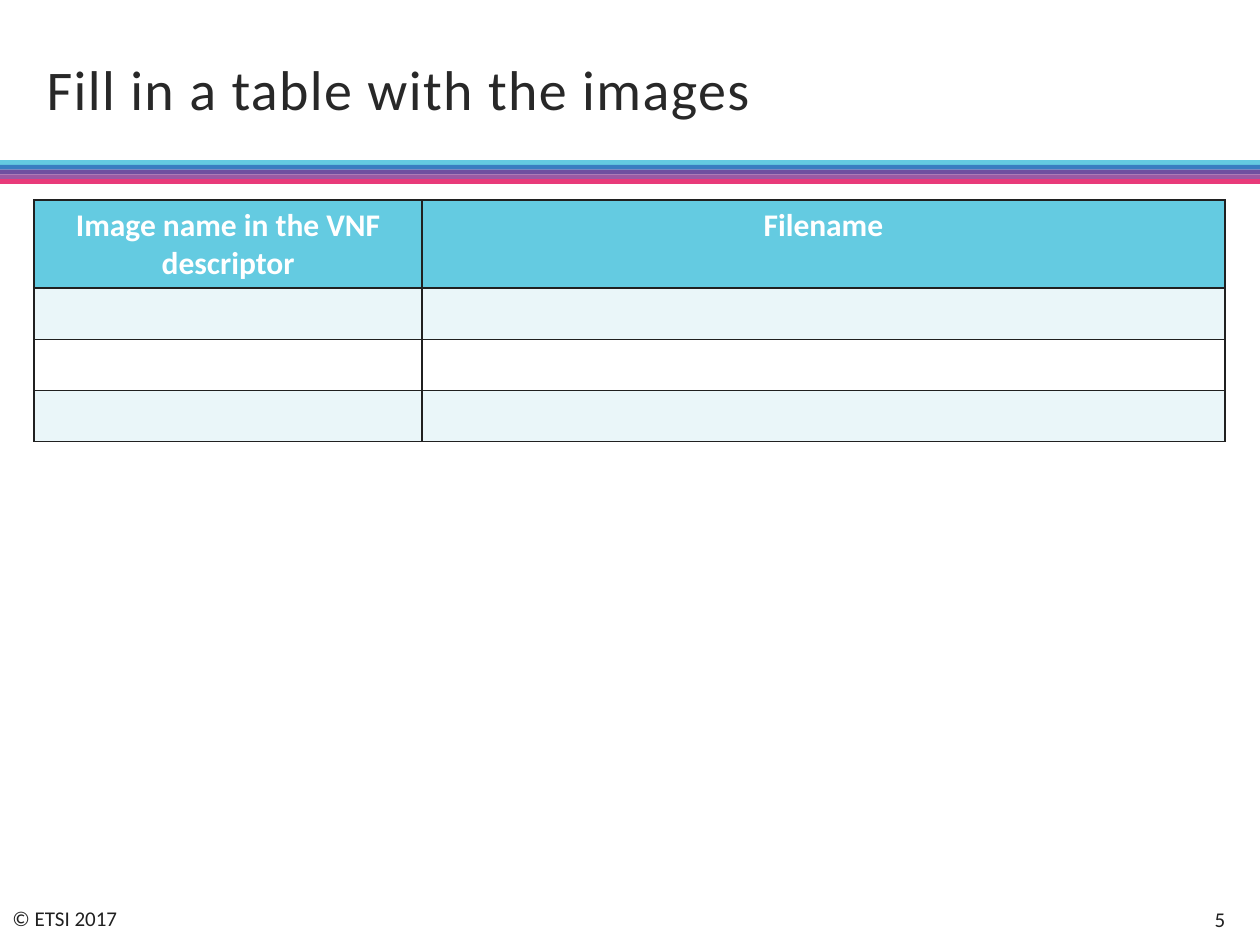
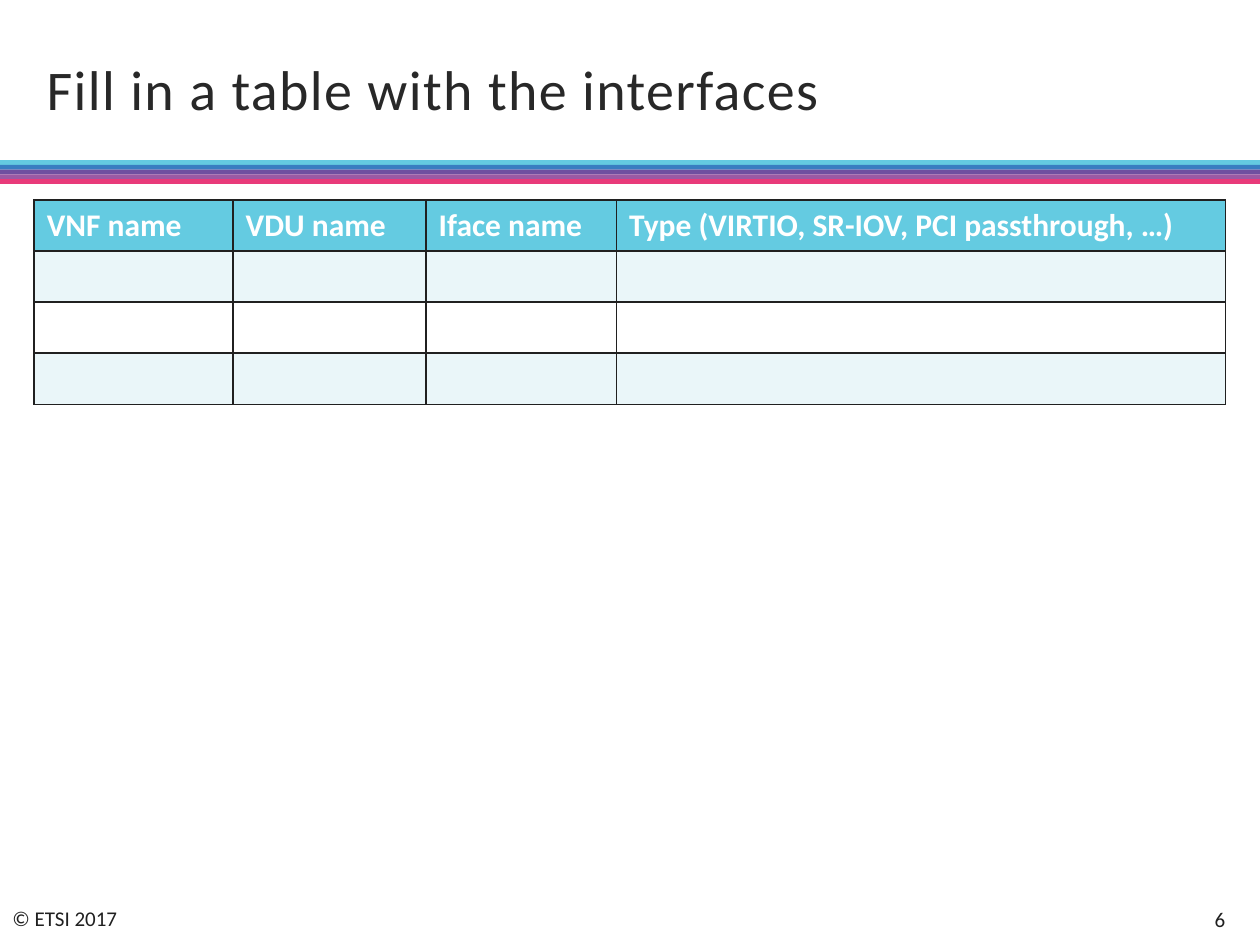
from lxml import etree
from pptx import Presentation
from pptx import util as u
from pptx.dml import color
from pptx.enum import shapes, text
from pptx.oxml import ns

FONT = "Calibri"
INK, TITLE_INK, WHITE = "202020", "282828", "FFFFFF"
HEADER_FILL, ROW_FILLS = "64CBE1", ("EAF6F9", "FFFFFF")
BAND_COLOURS = ("64CBE1", "397EC1", "704FA0", "9B59A4", "E83A7A")
COPYRIGHT = "© ETSI 2017"
FIRST_NUMBER = 5
EMPTY_ROWS = 3

LEFT, CENTER, RIGHT = (text.PP_ALIGN.LEFT, text.PP_ALIGN.CENTER,
                       text.PP_ALIGN.RIGHT)

SLIDES = [
    {"title": "Fill in a table with the images",
     "align": CENTER,
     "columns": [("Image name in the VNF descriptor", 7.82),
                 ("Filename", 16.18)]},
    {"title": "Fill in a table with the interfaces",
     "align": LEFT,
     "columns": [("VNF name", 4.01),
                 ("VDU name", 3.89),
                 ("Iface name", 3.84),
                 ("Type (VIRTIO, SR-IOV, PCI passthrough, …)", 12.27)]},
]

SLIDE_WIDTH, SLIDE_HEIGHT = 25.4, 19.05
TITLE_AREA = (0.69, 0.76, 18.82, 2.21)
COPYRIGHT_AREA = (0, 18.14, 2.82, 0.76)
NUMBER_AREA = (23.6, 18.03, 1.35, 0.99)
BANDS_TOP, BANDS_HEIGHT = 3.23, 0.48
TABLE_LEFT, TABLE_TOP, ROW_HEIGHT = 0.69, 4.03, 1.03


def rgb(value):
    return color.RGBColor.from_string(value)


def paint(target, value):
    target.fill.solid()
    target.fill.fore_color.rgb = rgb(value)


def write(frame, words, size=12, ink=INK, bold=False, align=LEFT,
          line_spacing=None, tracking=None):
    para = frame.paragraphs[0]
    para.alignment = align
    para.line_spacing = line_spacing
    span = para.add_run()
    span.text = words
    span.font.name = FONT
    span.font.size = u.Pt(size)
    span.font.bold = bold
    span.font.color.rgb = rgb(ink)
    if tracking:
        span.font._element.set("spc", str(round(tracking * 100)))


def add_text(page, area, words, anchor=text.MSO_ANCHOR.MIDDLE, wrap=True,
             **style):
    frame = page.shapes.add_textbox(*map(u.Cm, area)).text_frame
    frame.word_wrap = wrap
    frame.vertical_anchor = anchor
    write(frame, words, **style)


def add_bands(page):
    height = BANDS_HEIGHT / len(BAND_COLOURS)
    for index, colour in enumerate(BAND_COLOURS):
        band = page.shapes.add_shape(
            shapes.MSO_SHAPE.RECTANGLE, 0, u.Cm(BANDS_TOP + index * height),
            u.Cm(SLIDE_WIDTH), u.Cm(height))
        band.shadow.inherit = False
        band.line.fill.background()
        paint(band, colour)


def add_borders(cell):
    properties = cell._tc.get_or_add_tcPr()
    for side in ("lnL", "lnR", "lnT", "lnB"):
        line = etree.SubElement(properties, ns.qn(f"a:{side}"),
                                w=str(u.Pt(1)))
        fill = etree.SubElement(line, ns.qn("a:solidFill"))
        etree.SubElement(fill, ns.qn("a:srgbClr"), val=INK)


def add_grid(page, columns, align):
    row_count = EMPTY_ROWS + 1
    total_width = sum(width for _, width in columns)
    table = page.shapes.add_table(
        row_count, len(columns), u.Cm(TABLE_LEFT), u.Cm(TABLE_TOP),
        u.Cm(total_width), u.Cm(row_count * ROW_HEIGHT)).table
    for column, (heading, width) in enumerate(columns):
        table.columns[column].width = u.Cm(width)
        write(table.cell(0, column).text_frame, heading, size=18, ink=WHITE,
              bold=True, align=align)
    for index, row in enumerate(table.rows):
        row.height = u.Cm(ROW_HEIGHT)
        for cell in row.cells:
            add_borders(cell)
            paint(cell, ROW_FILLS[(index - 1) % 2] if index else HEADER_FILL)


def build_page(deck, number, content):
    page = deck.slides.add_slide(deck.slide_layouts[6])
    add_bands(page)
    add_text(page, COPYRIGHT_AREA, COPYRIGHT, anchor=text.MSO_ANCHOR.TOP,
             wrap=False)
    add_text(page, TITLE_AREA, content["title"], size=32, ink=TITLE_INK,
             line_spacing=0.9, tracking=0.8)
    add_text(page, NUMBER_AREA, str(number), align=RIGHT)
    add_grid(page, content["columns"], content["align"])


def main():
    deck = Presentation()
    deck.slide_width, deck.slide_height = u.Cm(SLIDE_WIDTH), u.Cm(SLIDE_HEIGHT)
    for number, content in enumerate(SLIDES, FIRST_NUMBER):
        build_page(deck, number, content)
    deck.save("out.pptx")


if __name__ == "__main__":
    main()
